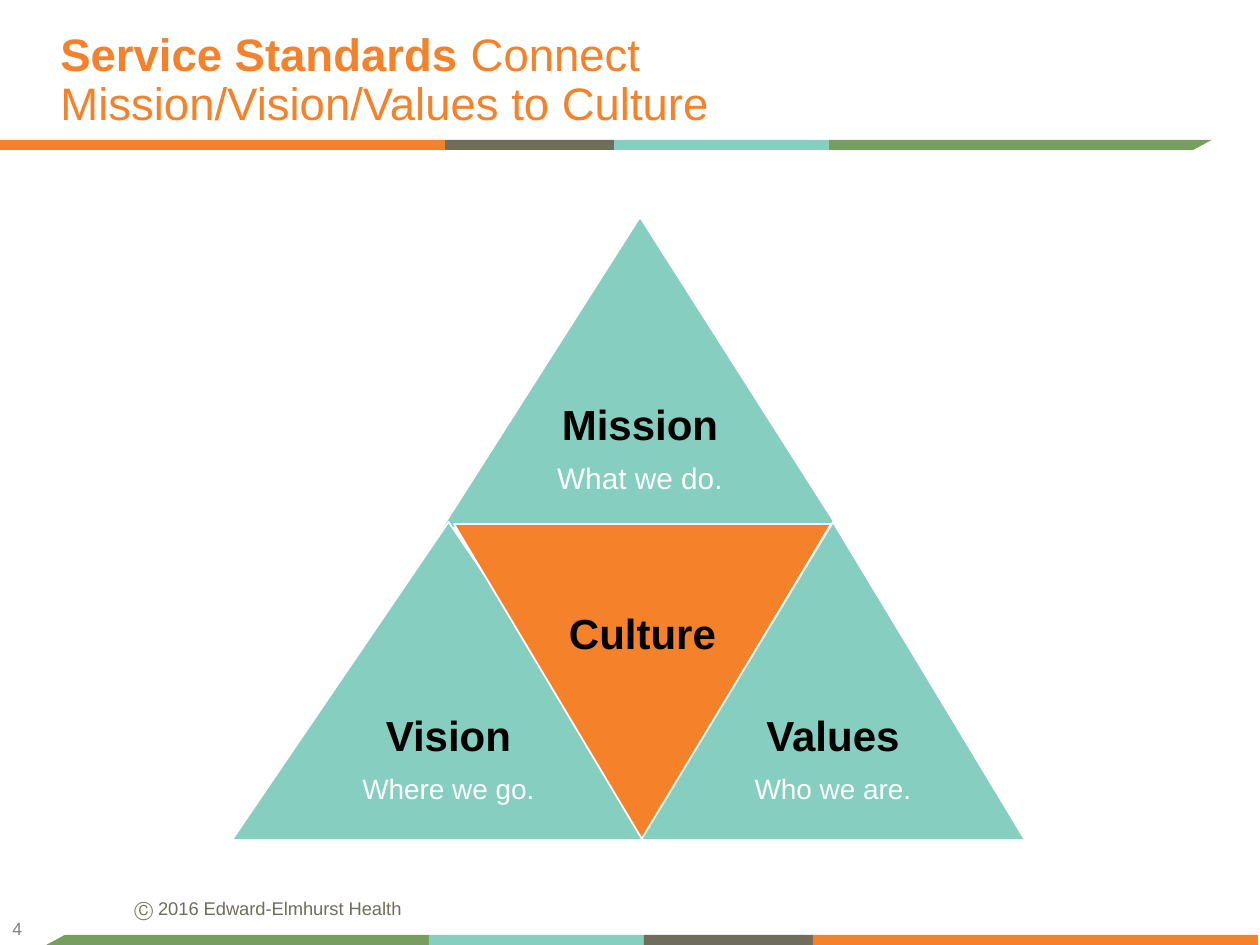
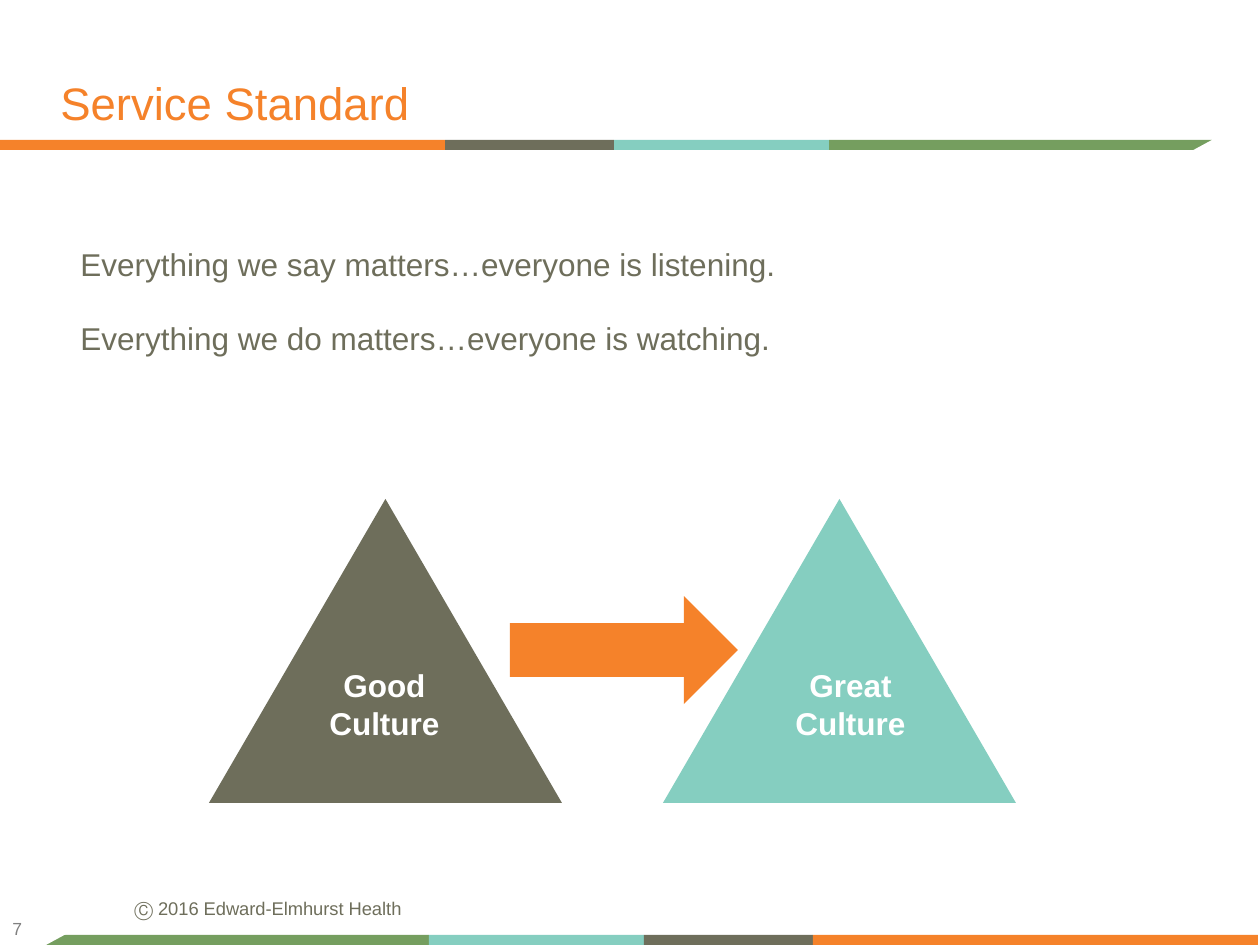
from pptx import Presentation, util as u
from pptx.dml.color import RGBColor
from pptx.enum import shapes, text

PX = u.Inches(1) / 126
WIDTH, HEIGHT = 1260, 945


class Theme:
    font = "Arial"
    orange, stone, teal, green = "F5822A", "6E6E5B", "85CEC0", "759E5F"
    white, black, grey = "FFFFFF", "000000", "808080"
    title, heading, body, caption, copyright, number = 26, 24, 18, 16, 10.5, 10


# Content: a paragraph is a list of (text, size, colour, bold) runs
def title_run(words, bold=False):
    return words, Theme.title, Theme.orange, bold


CONNECT_TITLE = [title_run("Service Standards ", True),
                 title_run("Connect\nMission/Vision/Values to Culture")]
STANDARD_TITLE = [title_run("Service Standard")]
COPYRIGHT = "Ⓒ 2016 Edward-Elmhurst Health"

# heading, caption, caption size, box in px, fill, points down
PYRAMID = [
    ("Mission", "What we do.", 17, (442, 217, 396, 311), Theme.teal, False),
    ("Vision", "Where we go.", Theme.caption, (232, 522, 433, 318), Theme.teal, False),
    ("Culture", None, None, (454, 524, 377, 316), Theme.orange, True),
    ("Values", "Who we are.", Theme.caption, (641, 522, 384, 318), Theme.teal, False),
]
STATEMENTS = ["Everything we say matters…everyone is listening.",
              "Everything we do matters…everyone is watching."]
CULTURES = [("Good Culture", Theme.stone, 209, 309), ("Great Culture", Theme.teal, 663, 775)]

# Band: colour, left and right edge of the top one; the bottom one is turned half round
BAND = [(Theme.green, 829, 1212), (Theme.teal, 614, 829),
        (Theme.stone, 445, 614), (Theme.orange, 0, 445)]
BAND_TOP, BAND_HEIGHT = 140, 10
WEDGE = [(1253, 153), (1188, 153), (1212, 140)]
TURN_X, TURN_Y = 1258, 1085


def px(*values):
    return [u.Emu(round(v * PX)) for v in values]


def paint(shape, fill, line=None):
    shape.shadow.inherit = False
    shape.fill.solid()
    shape.fill.fore_color.rgb = RGBColor.from_string(fill)
    if line:
        shape.line.color.rgb = RGBColor.from_string(line)
        shape.line.width = u.Pt(1)
    else:
        shape.line.fill.background()


def draw(slide, kind, box, fill, line=None):
    shape = slide.shapes.add_shape(kind, *px(*box))
    paint(shape, fill, line)
    return shape


def write(slide, box, paragraphs, frame_format=None, gap=0, **paragraph_format):
    frame = slide.shapes.add_textbox(*px(*box)).text_frame
    for name, value in {"word_wrap": True, **(frame_format or {})}.items():
        setattr(frame, name, value)
    for index, runs in enumerate(paragraphs):
        paragraph = frame.paragraphs[0] if index == 0 else frame.add_paragraph()
        for name, value in paragraph_format.items():
            setattr(paragraph, name, value)
        if index:
            paragraph.space_before = u.Pt(gap)
        for words, size, colour, bold in runs:
            for row, part in enumerate(words.split("\n")):
                if row:
                    paragraph.add_line_break()
                run = paragraph.add_run()
                run.text = part
                run.font.color.rgb = RGBColor.from_string(colour)
                for name, value in {"name": Theme.font, "size": u.Pt(size), "bold": bold}.items():
                    setattr(run.font, name, value)


def draw_band(slide, turned):
    for colour, left, right in BAND:
        x, y = left, BAND_TOP
        if turned:
            x, y = TURN_X - right, TURN_Y - BAND_TOP - BAND_HEIGHT
        draw(slide, shapes.MSO_SHAPE.RECTANGLE, (x, y, right - left, BAND_HEIGHT), colour)
    corners = [(TURN_X - x, TURN_Y - y) if turned else (x, y) for x, y in WEDGE]
    builder = slide.shapes.build_freeform(*corners[0], scale=PX)
    builder.add_line_segments(corners[1:])
    paint(builder.convert_to_shape(), Theme.white)


def new_slide(deck, title, number):
    slide = deck.slides.add_slide(deck.slide_layouts[6])
    for turned in (False, True):
        draw_band(slide, turned)
    bottom = {"vertical_anchor": text.MSO_ANCHOR.BOTTOM}
    write(slide, (122, 891, 297, 35),
          [[(COPYRIGHT, Theme.copyright, Theme.stone, False)]], {"word_wrap": False})
    write(slide, (0, 895, 57, 50), [[(number, Theme.number, Theme.grey, False)]], bottom)
    write(slide, (48, 15, 1162, 122), [title], bottom, line_spacing=0.9)
    return slide


def draw_pyramid(slide):
    for heading, caption, size, box, fill, down in PYRAMID:
        triangle = draw(slide, shapes.MSO_SHAPE.ISOSCELES_TRIANGLE, box, fill, Theme.white)
        triangle.rotation = 180 if down else 0
        # Text takes the middle half of the width and the wider half of the height
        x, y, w, h = box
        label_box = (x + w / 4, y if down else y + h / 2, w / 2, h / 2)
        lines = [[(heading, Theme.heading, Theme.black, True)]]
        if caption:
            lines.append([(caption, size, Theme.white, False)])
        margins = {f"margin_{side}": u.Inches(0.1) for side in ("left", "right", "top", "bottom")}
        if down:
            margins["margin_top"] = px(78)[0]
        write(slide, label_box, lines,
              {"vertical_anchor": text.MSO_ANCHOR.MIDDLE, **margins}, gap=8.4,
              alignment=text.PP_ALIGN.CENTER, line_spacing=0.9)


def draw_culture_change(slide):
    for _, fill, left, _ in CULTURES:
        draw(slide, shapes.MSO_SHAPE.ISOSCELES_TRIANGLE, (left, 499, 353, 304), fill)
    draw(slide, shapes.MSO_SHAPE.RIGHT_ARROW, (510, 596, 228, 108), Theme.orange)
    for label, _, _, left in CULTURES:
        write(slide, (left, 660, 151, 89), [[(label, Theme.body, Theme.white, True)]],
              alignment=text.PP_ALIGN.CENTER)


def main():
    deck = Presentation()
    deck.slide_width, deck.slide_height = px(WIDTH, HEIGHT)

    # Mission, vision and values around culture
    draw_pyramid(new_slide(deck, CONNECT_TITLE, "4"))

    # From good to great culture
    standard = new_slide(deck, STANDARD_TITLE, "7")
    write(standard, (68, 220, 1130, 659),
          [[(statement, Theme.body, Theme.stone, False)] for statement in STATEMENTS],
          gap=10, line_spacing=1.5)
    draw_culture_change(standard)

    deck.save("out.pptx")


if __name__ == "__main__":
    main()
